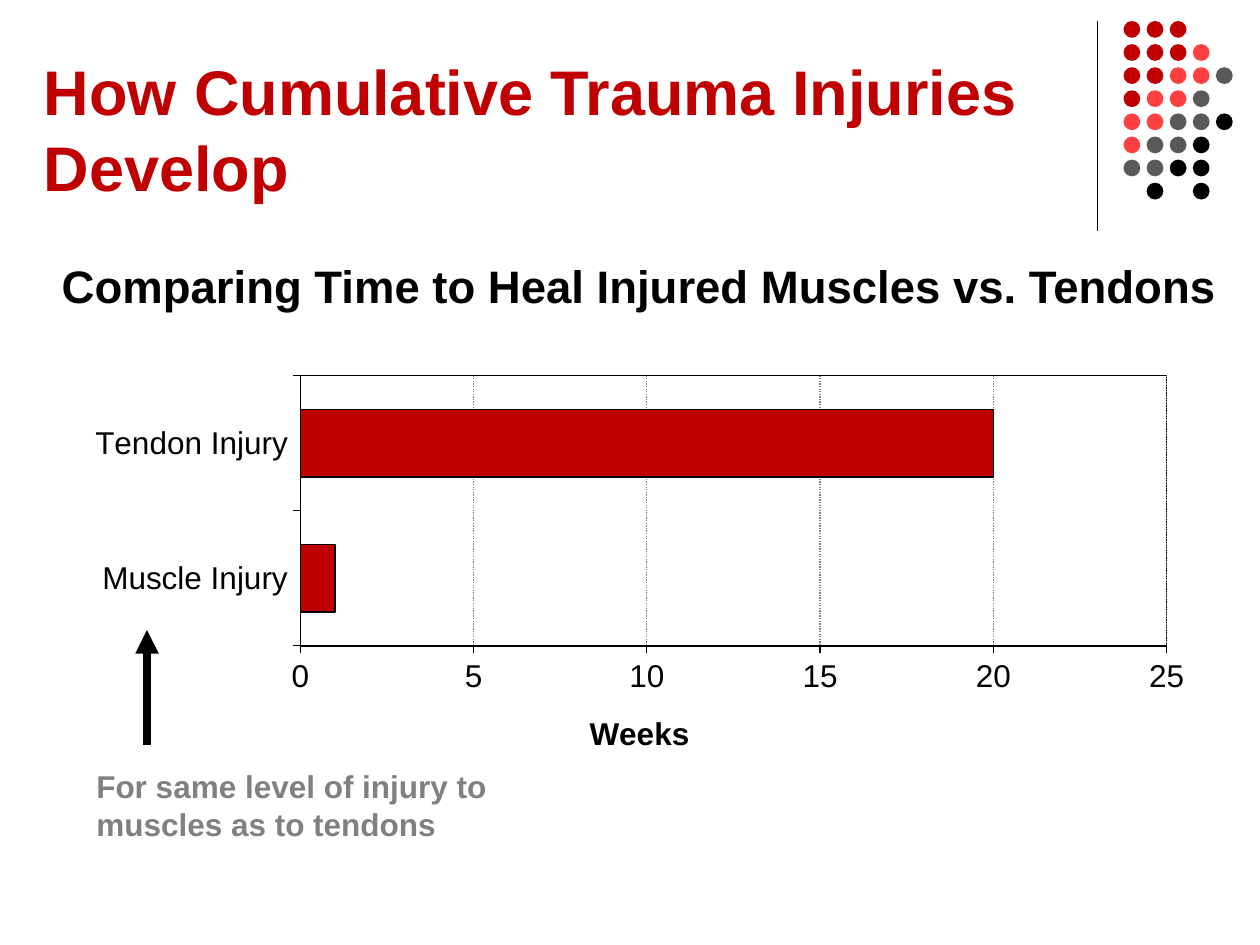
from dataclasses import dataclass
from lxml.etree import SubElement
from pptx import Presentation
from pptx.chart.data import CategoryChartData
from pptx.dml.color import RGBColor
from pptx.enum.chart import XL_CHART_TYPE, XL_TICK_MARK
from pptx.enum.dml import MSO_LINE
from pptx.enum.shapes import MSO_CONNECTOR, MSO_SHAPE
from pptx.enum.text import MSO_ANCHOR
from pptx.oxml import parse_xml
from pptx.oxml.ns import nsdecls, qn
from pptx.slide import Slide
from pptx.util import Emu, Inches, Pt

FONT = "Arial"
RED, BLACK, GREY = "C00000", "000000", "808080"
TONES = {"r": RED, "p": "FF4040", "g": "595959", "k": BLACK}
DOTS = ("rrr", "rrrp", "rrppg", "rppg", "ppggk", "pggk", "ggkk", " k k")
STEP, SIZE = 2.2, 1.6


@dataclass(frozen=True)
class Box:
    """A place in grid columns and rows, twelve to the inch."""
    col: float
    row: float
    wide: float
    high: float

    def spans(self) -> tuple[Emu, ...]:
        """Return left, top, width and height as lengths."""
        return tuple(map(grid, (self.col, self.row, self.wide, self.high)))


@dataclass(frozen=True)
class Rule:
    """An upright line in a grid column, drawn from one row to another."""
    col: float
    start: float
    end: float
    weight: float
    head: bool = False


RULES = (Rule(104.5, 2, 22, 0.75), Rule(14, 60, 71, 4.5, True))


def grid(count: float) -> Emu:
    """Turn grid steps into a length."""
    return Inches(count / 12)


def paint(code: str) -> RGBColor:
    """Turn a hex string into a colour."""
    return RGBColor.from_string(code)


def ink(line, code: str = BLACK, weight: float = 0.75) -> None:
    """Give a line its colour and weight."""
    line.color.rgb = paint(code)
    line.width = Pt(weight)


def style(font, size: float, code: str = BLACK, bold: bool = False) -> None:
    """Set face, size, colour and weight of a font."""
    font.name, font.size, font.bold = FONT, Pt(size), bold
    font.color.rgb = paint(code)


def write(slide: Slide, box: Box, text: str, *, size: float, code: str = BLACK,
          anchor: MSO_ANCHOR = MSO_ANCHOR.TOP, lead: int = 0) -> None:
    """Add bold wrapped text, with space before it in percent."""
    frame = slide.shapes.add_textbox(*box.spans()).text_frame
    frame.word_wrap, frame.vertical_anchor = True, anchor
    para = frame.paragraphs[0]
    run = para.add_run()
    run.text = text
    style(run.font, size, code, True)
    if lead:
        gap = SubElement(para._p.get_or_add_pPr(), qn("a:spcBef"))
        SubElement(gap, qn("a:spcPct"), val=str(lead * 1000))


def draw_rule(slide: Slide, rule: Rule) -> None:
    """Draw one upright line, with an arrowhead at its start if asked."""
    left = grid(rule.col)
    line = slide.shapes.add_connector(
        MSO_CONNECTOR.STRAIGHT, left, grid(rule.start), left, grid(rule.end))
    ink(line.line, weight=rule.weight)
    if rule.head:
        SubElement(line.line._get_or_add_ln(), qn("a:headEnd"), type="triangle")
    SubElement(line._element.spPr, qn("a:effectLst"))


def draw_dots(slide: Slide) -> None:
    """Draw the corner pattern of dots."""
    group = slide.shapes.add_group_shape()
    for row, tones in enumerate(DOTS):
        for col, tone in enumerate(tones):
            if tone in TONES:
                box = Box(107 + col * STEP, 2 + row * STEP, SIZE, SIZE)
                dot = group.shapes.add_shape(MSO_SHAPE.OVAL, *box.spans())
                dot.shadow.inherit = False
                dot.fill.solid()
                dot.fill.fore_color.rgb = paint(TONES[tone])
                dot.line.fill.background()


def layout(x: float, y: float, size: str = "") -> object:
    """Build a manual chart layout from shares of the chart."""
    return parse_xml(
        f'<c:layout {nsdecls("c")}><c:manualLayout>'
        + ('<c:layoutTarget val="inner"/>' if size else "")
        + '<c:xMode val="edge"/><c:yMode val="edge"/>'
        f'<c:x val="{x}"/><c:y val="{y}"/>{size}</c:manualLayout></c:layout>')


def draw_chart(slide: Slide, box: Box) -> None:
    """Draw the bar chart of healing times."""
    data = CategoryChartData()
    data.categories = ["Muscle Injury", "Tendon Injury"]
    data.add_series("Series 1", [1, 20])
    chart = slide.shapes.add_chart(
        XL_CHART_TYPE.BAR_CLUSTERED, *box.spans(), data).chart
    chart.has_legend = chart.has_title = False
    style(chart.font, 18)
    cats, weeks = chart.category_axis, chart.value_axis
    for axis in (cats, weeks):
        axis.major_tick_mark = XL_TICK_MARK.OUTSIDE
        axis.minor_tick_mark = XL_TICK_MARK.NONE
        ink(axis.format.line)
    cats.has_major_gridlines = False
    weeks.minimum_scale, weeks.maximum_scale, weeks.major_unit = 0, 25, 5
    weeks.has_major_gridlines = True
    mesh = weeks.major_gridlines.format.line
    ink(mesh, GREY)
    mesh.dash_style = MSO_LINE.ROUND_DOT
    weeks.has_title = True
    run = weeks.axis_title.text_frame.paragraphs[0].add_run()
    run.text = "Weeks"
    style(run.font, 18, bold=True)
    title = weeks.axis_title._element
    for old in title.findall(qn("c:layout")):
        title.remove(old)
    title.find(qn("c:tx")).addnext(layout(0.45, 0.83))
    plot = chart.plots[0]
    plot.gap_width, plot.vary_by_categories = 100, False
    bars = plot.series[0].format
    bars.fill.solid()
    bars.fill.fore_color.rgb = paint(RED)
    ink(bars.line)
    area = chart._chartSpace.chart.plotArea
    for old in area.findall(qn("c:layout")):
        area.remove(old)
    area.insert(0, layout(0.2, 0.02, '<c:w val="0.764"/><c:h val="0.66"/>'))
    area.append(parse_xml(
        f'<c:spPr {nsdecls("c", "a")}><a:noFill/><a:ln w="9525"><a:solidFill>'
        f'<a:srgbClr val="{BLACK}"/></a:solidFill></a:ln></c:spPr>'))


def main() -> None:
    """Build and save the slide."""
    deck = Presentation()
    deck.slide_width, deck.slide_height = grid(120), grid(90)
    slide = deck.slides.add_slide(deck.slide_layouts[6])
    border, arrow = RULES
    draw_rule(slide, border)
    draw_dots(slide)
    write(slide, Box(3, 3, 101, 17), "How Cumulative Trauma Injuries Develop",
          size=36, code=RED, anchor=MSO_ANCHOR.BOTTOM)
    write(slide, Box(4.7, 24, 113.3, 6.5),
          "Comparing Time to Heal Injured Muscles vs. Tendons", size=26, lead=20)
    draw_chart(slide, Box(7, 35, 108, 39))
    write(slide, Box(8, 72.5, 43, 8.5),
          "For same level of injury to muscles as to tendons",
          size=18, code=GREY, lead=20)
    draw_rule(slide, arrow)
    deck.save("out.pptx")


if __name__ == "__main__":
    main()
